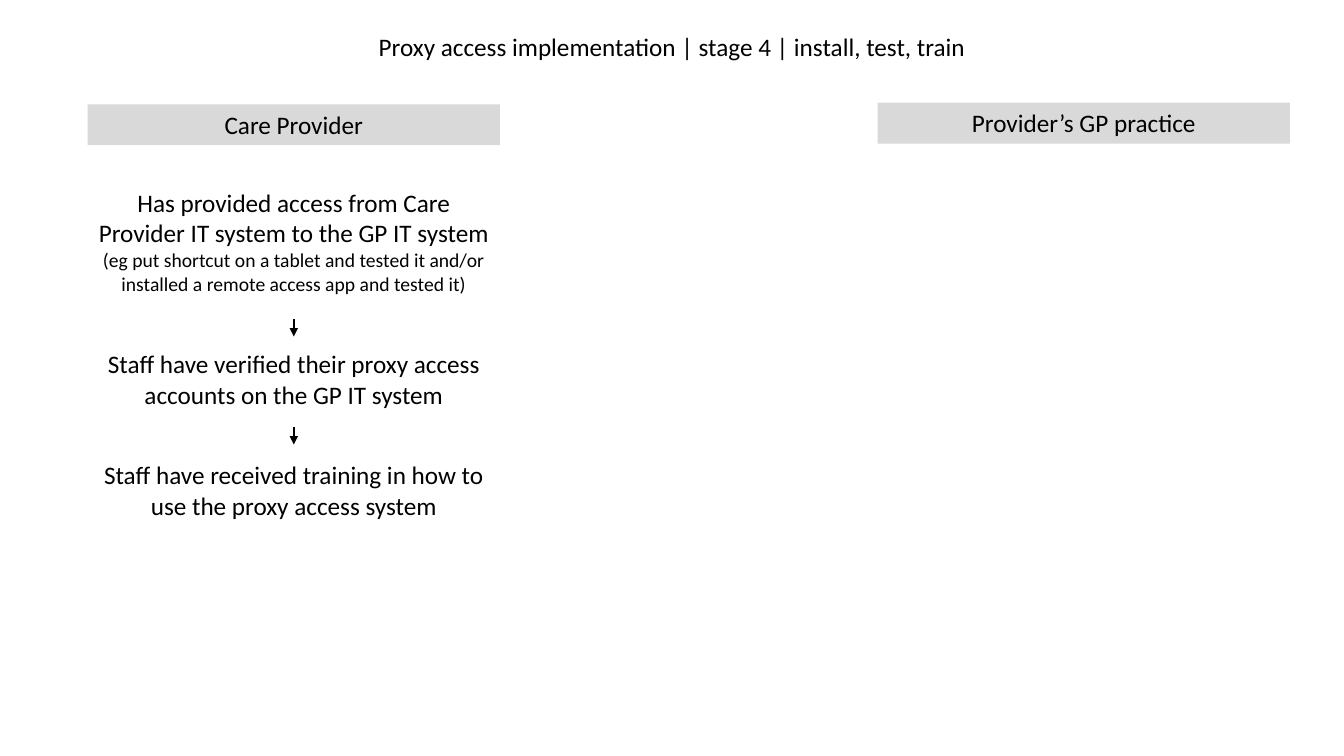
from dataclasses import dataclass

from lxml.etree import SubElement
from pptx import Presentation
from pptx.dml.color import RGBColor
from pptx.enum.shapes import MSO_CONNECTOR, MSO_SHAPE
from pptx.enum.text import MSO_ANCHOR, PP_ALIGN
from pptx.oxml.ns import qn
from pptx.shapes.autoshape import Shape
from pptx.slide import Slide
from pptx.util import Cm, Pt


@dataclass(frozen=True)
class Theme:
    font: str = "Calibri"
    text: RGBColor = RGBColor(0x00, 0x00, 0x00)
    header: RGBColor = RGBColor(0xD9, 0xD9, 0xD9)
    body_size: float = 18
    note_size: float = 14
    line_width: float = 1.5


@dataclass(frozen=True)
class Header:
    text: str
    left: float
    top: float


@dataclass(frozen=True)
class Step:
    text: str
    top: float
    height: float
    note: str = ""


THEME = Theme()
SLIDE_W, SLIDE_H = 33.87, 19.05
COLUMN_LEFT, COLUMN_W = 2.21, 10.39
BAR_H = 1.03
ARROW_LENGTH = 0.43

TITLE = "Proxy access implementation | stage 4 | install, test, train"
HEADERS = [
    Header("Care Provider", COLUMN_LEFT, 2.63),
    Header("Provider’s GP practice", 22.12, 2.59),
]
STEPS = [
    Step(
        "Has provided access from Care Provider IT system to the GP IT system",
        4.6,
        3.0,
        "(eg put shortcut on a tablet and tested it and/or "
        "installed a remote access app and tested it)",
    ),
    Step("Staff have verified their proxy access accounts on the GP IT system", 8.66, 1.8),
    Step("Staff have received training in how to use the proxy access system", 11.46, 1.8),
]
ARROW_TOPS = [8.05, 10.77]


def write_text(sp: Shape, text: str, *, size: float = THEME.body_size, append: bool = False) -> None:
    tf = sp.text_frame
    tf.word_wrap = True
    tf.vertical_anchor = MSO_ANCHOR.TOP
    p = tf.add_paragraph() if append else tf.paragraphs[0]
    p.alignment = PP_ALIGN.CENTER
    r = p.add_run()
    r.text = text
    r.font.name = THEME.font
    r.font.size = Pt(size)
    r.font.color.rgb = THEME.text


def add_title(s: Slide, text: str) -> None:
    sp = s.shapes.add_textbox(0, Cm(0.66), Cm(SLIDE_W), Cm(BAR_H))
    write_text(sp, text)


def add_header(s: Slide, header: Header) -> None:
    sp = s.shapes.add_shape(
        MSO_SHAPE.RECTANGLE, Cm(header.left), Cm(header.top), Cm(COLUMN_W), Cm(BAR_H)
    )
    sp.shadow.inherit = False
    sp.fill.solid()
    sp.fill.fore_color.rgb = THEME.header
    sp.line.fill.background()
    write_text(sp, header.text)


def add_step(s: Slide, step: Step) -> None:
    sp = s.shapes.add_textbox(Cm(COLUMN_LEFT), Cm(step.top), Cm(COLUMN_W), Cm(step.height))
    write_text(sp, step.text)
    if step.note:
        write_text(sp, step.note, size=THEME.note_size, append=True)


def add_arrow(s: Slide, top: float) -> None:
    x = Cm(COLUMN_LEFT + COLUMN_W / 2)
    cxn = s.shapes.add_connector(MSO_CONNECTOR.STRAIGHT, x, Cm(top), x, Cm(top + ARROW_LENGTH))
    cxn.line.color.rgb = THEME.text
    cxn.line.width = Pt(THEME.line_width)
    sp_pr = cxn.element.spPr
    SubElement(sp_pr.find(qn("a:ln")), qn("a:tailEnd"), type="triangle")
    SubElement(sp_pr, qn("a:effectLst"))


def main() -> None:
    prs = Presentation()
    prs.slide_width, prs.slide_height = Cm(SLIDE_W), Cm(SLIDE_H)
    s = prs.slides.add_slide(prs.slide_layouts[6])
    add_title(s, TITLE)
    for header in HEADERS:
        add_header(s, header)
    for step in STEPS:
        add_step(s, step)
    for top in ARROW_TOPS:
        add_arrow(s, top)
    prs.save("out.pptx")


if __name__ == "__main__":
    main()
